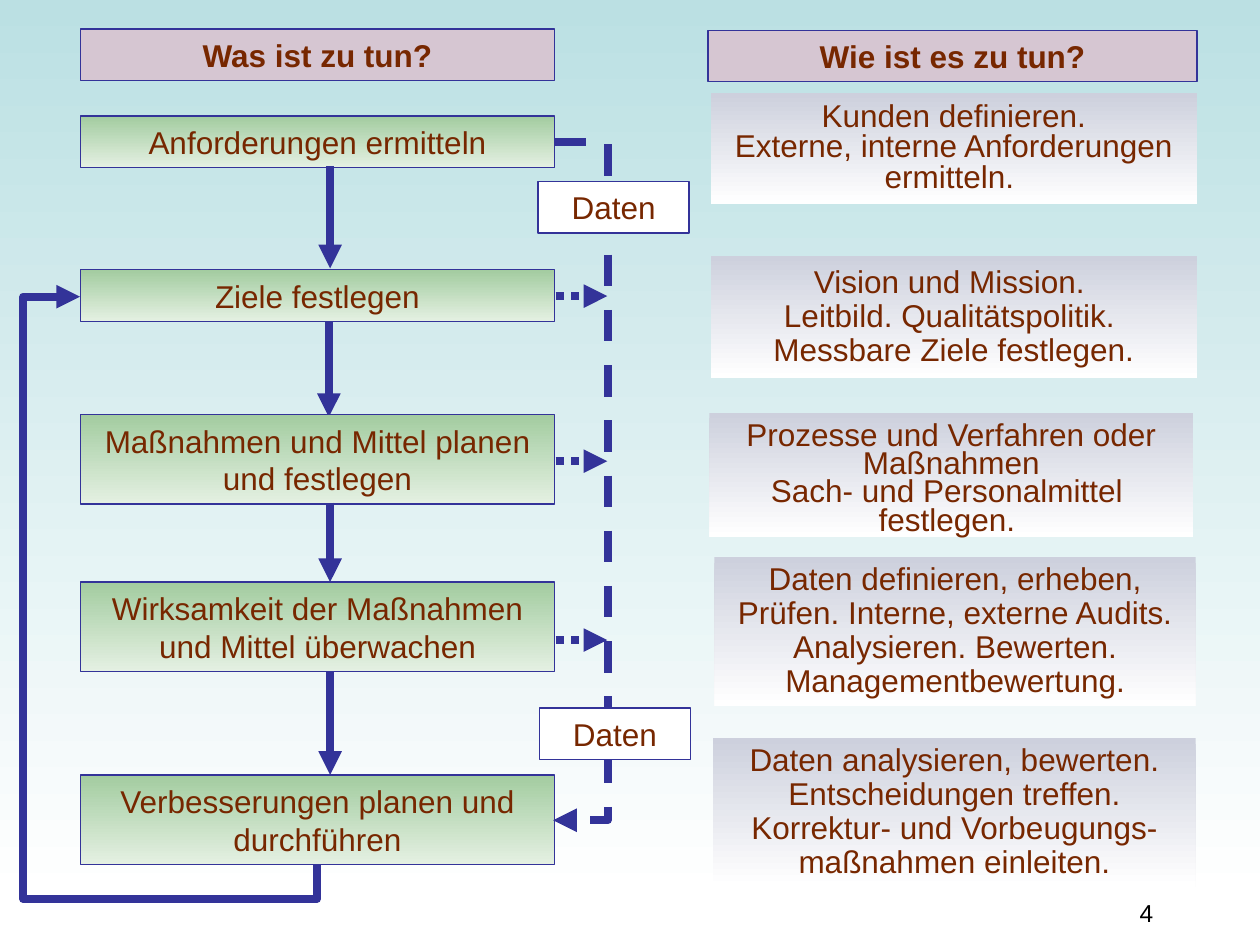
"""Build a slide that sets five management steps beside how each is done."""
from lxml.etree import SubElement
from pptx import Presentation
from pptx.dml.color import RGBColor
from pptx.enum.dml import MSO_LINE
from pptx.enum.shapes import MSO_CONNECTOR, MSO_SHAPE
from pptx.enum.text import MSO_ANCHOR, PP_ALIGN
from pptx.oxml.ns import qn
from pptx.util import Inches, Pt

HUES = {
    "line": "333399", "text": "772700", "head": "D6C6D2", "white": "FFFFFF",
    "black": "000000", "sky": "BBE0E3", "green": "A3CCA0", "mint": "E4F0E2",
    "grey": "CDD0DD",
}
LEFT, WIDTH, LOW, TALL = 0.64, 3.76, 0.41, 0.71
PAD = (0.1, 0.05, 0.1, 0.05)

STEPS = [
    ("Anforderungen ermitteln", 0.92, LOW),
    ("Ziele festlegen", 2.14, LOW),
    ("Maßnahmen und Mittel planen und festlegen", 3.29, TALL),
    ("Wirksamkeit der Maßnahmen und Mittel überwachen", 4.62, TALL),
    ("Verbesserungen planen und durchführen", 6.15, TALL),
]
NOTES = [
    ((5.64, 0.74, 3.86, 0.88), (0.1, 0.08, 0.1, 0), 0.8,
     ["Kunden definieren.", "Externe, interne Anforderungen ermitteln. "]),
    ((5.64, 2.03, 3.86, 0.97), (0, 0.08, 0, 0.08), 0.9,
     ["Vision und Mission. ", "Leitbild. Qualitätspolitik. ",
      "Messbare Ziele festlegen."]),
    ((5.63, 3.28, 3.84, 0.98), (0, 0.08, 0, 0), 0.75,
     ["Prozesse und Verfahren oder Maßnahmen", "Sach- und Personalmittel ",
      "festlegen. "]),
    ((5.67, 4.42, 3.82, 1.18), PAD, 0.9,
     ["Daten definieren, erheben,", "Prüfen. Interne, externe Audits.",
      "Analysieren. Bewerten.", "Managementbewertung."]),
    ((5.66, 5.86, 3.83, 1.18), PAD, 0.9,
     ["Daten analysieren, bewerten.", "Entscheidungen treffen.",
      "Korrektur- und Vorbeugungs-maßnahmen einleiten."]),
]


class Chart:
    """Hold the style and the current slide."""

    def __init__(self, slide):
        self.shapes = slide.shapes
        self.font = "Arial"

    def hue(self, name):
        return RGBColor.from_string(HUES[name])

    def put_text(self, frame, lines, pad=PAD, space=None, size=18, hue="text",
                 bold=False, align=PP_ALIGN.CENTER):
        frame.word_wrap = True
        (frame.margin_left, frame.margin_top,
         frame.margin_right, frame.margin_bottom) = map(Inches, pad)
        for pos, line in enumerate(lines):
            para = frame.add_paragraph() if pos else frame.paragraphs[0]
            para.alignment = align
            if space:
                para.line_spacing = space
            run = para.add_run()
            run.text = line
            font = run.font
            font.name, font.size, font.bold = self.font, Pt(size), bold
            font.color.rgb = self.hue(hue)

    def box(self, area, hues, lines=(), edge=True, anchor=MSO_ANCHOR.MIDDLE,
            **style):
        shape = self.shapes.add_shape(MSO_SHAPE.RECTANGLE, *map(Inches, area))
        shape.shadow.inherit = False
        if len(hues) == 1:
            shape.fill.solid()
            shape.fill.fore_color.rgb = self.hue(hues[0])
        else:
            shape.fill.gradient()
            shape.fill.gradient_angle = 270
            for stop, name in zip(shape.fill.gradient_stops, hues):
                stop.color.rgb = self.hue(name)
        if edge:
            shape.line.color.rgb = self.hue("line")
            shape.line.width = Pt(0.75)
        else:
            shape.line.fill.background()
        shape.text_frame.vertical_anchor = anchor
        self.put_text(shape.text_frame, lines, **style)

    def arrow(self, start, end, dash=None, kind=MSO_CONNECTOR.STRAIGHT):
        link = self.shapes.add_connector(kind, *map(Inches, (*start, *end)))
        link.line.color.rgb = self.hue("line")
        link.line.width = Pt(4.5)
        if dash:
            link.line.dash_style = dash
        props = link._element.spPr
        SubElement(props.find(qn("a:ln")), qn("a:tailEnd"), type="triangle")
        SubElement(props, qn("a:effectLst"))
        return props

    def elbow(self, start, end, preset, bends, dash=None, **turn):
        props = self.arrow(start, end, dash, MSO_CONNECTOR.ELBOW)
        for key, value in turn.items():
            props.find(qn("a:xfrm")).set(key, value)
        geom = props.find(qn("a:prstGeom"))
        geom.set("prst", preset)
        guides = geom.find(qn("a:avLst"))
        if guides is None:
            guides = SubElement(geom, qn("a:avLst"))
        for pos, bend in enumerate(bends, 1):
            SubElement(guides, qn("a:gd"), name=f"adj{pos}",
                       fmla=f"val {round(bend * 100000)}")

    def label(self, area, text, **style):
        frame = self.shapes.add_textbox(*map(Inches, area)).text_frame
        self.put_text(frame, [text], **style)


def main():
    deck = Presentation()
    deck.slide_width, deck.slide_height = Inches(10), Inches(7.5)
    chart = Chart(deck.slides.add_slide(deck.slide_layouts[6]))

    chart.box((0, 0, 10, 7.14), ("sky", "white"), edge=False)
    chart.label((7.17, 7.08, 2.08, 0.25), "4", size=14, hue="black",
                align=PP_ALIGN.RIGHT)
    chart.arrow((2.61, 2.54), (2.61, 3.31))
    for text, top, high in STEPS:
        chart.box((LEFT, top, WIDTH, high), ("green", "mint"), [text])
    for area, pad, space, lines in NOTES:
        chart.box(area, ("grey", "white"), lines, edge=False,
                  anchor=MSO_ANCHOR.TOP, pad=pad, space=space)
    chart.box((LEFT, 0.23, WIDTH, LOW), ("head",), ["Was ist zu tun?"],
              bold=True)
    chart.box((5.62, 0.24, 3.88, LOW), ("head",), ["Wie ist es zu tun?"],
              bold=True)

    for top, foot in ((1.32, 2.13), (3.99, 4.62), (5.33, 6.15)):
        chart.arrow((2.62, top), (2.62, foot))
    chart.elbow((-0.68, 3.67), (3.83, 5.55), "bentConnector4",
                (-0.06, 1.24), rot="16200000", flipV="1")
    chart.elbow((4.4, 1.13), (4.39, 6.51), "bentConnector3", (-43,),
                MSO_LINE.DASH)
    for high in (2.35, 3.66, 5.08):
        chart.arrow((4.41, high), (4.82, high), MSO_LINE.ROUND_DOT)
    for left, top in ((4.27, 1.44), (4.28, 5.62)):
        chart.box((left, top, 1.2, LOW), ("white",), ["Daten"])

    deck.save("out.pptx")


if __name__ == "__main__":
    main()
